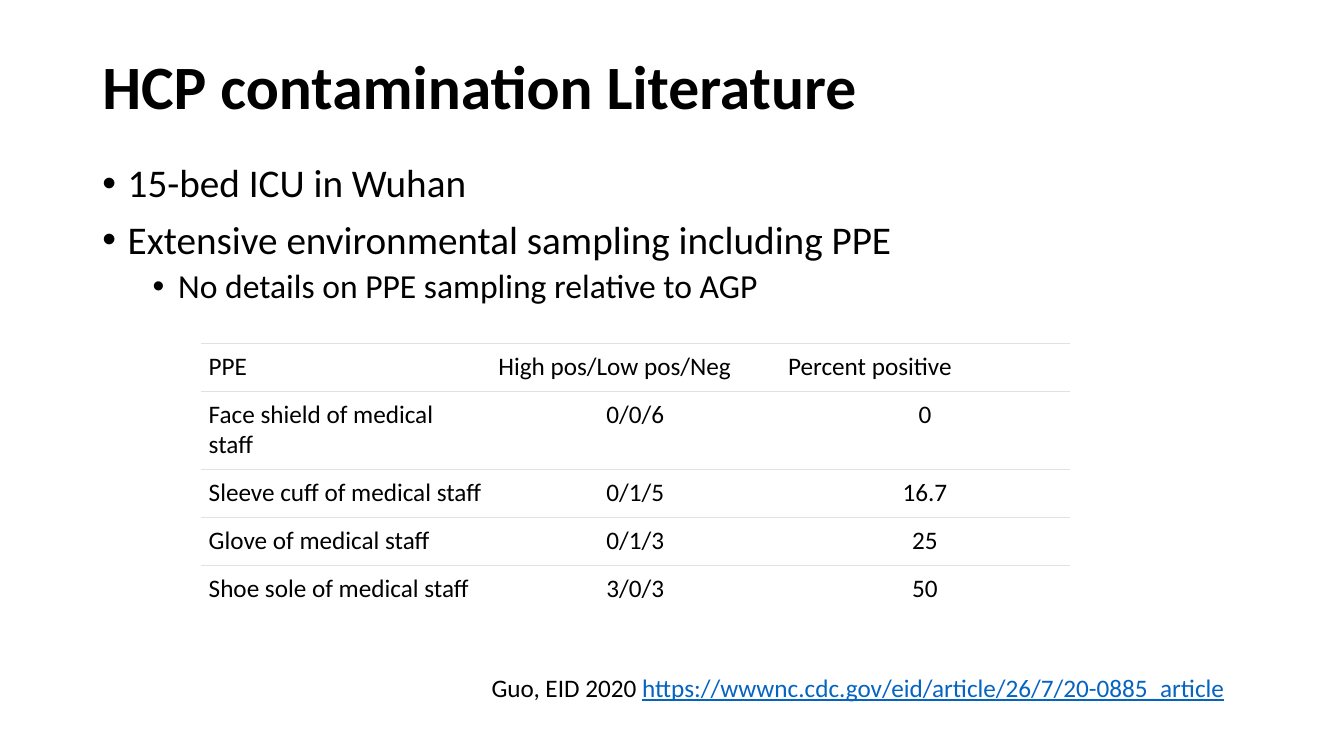
from lxml import etree
from pptx import Presentation
from pptx.dml.color import RGBColor
from pptx.enum.text import MSO_ANCHOR, PP_ALIGN
from pptx.oxml.ns import qn
from pptx.util import Cm, Pt

# Content
TITLE = "HCP contamination Literature"
BULLETS = [  # level, text
    (0, "15-bed ICU in Wuhan"),
    (0, "Extensive environmental sampling including PPE"),
    (1, "No details on PPE sampling relative to AGP"),
]
PPE_ROWS = [
    ("PPE", "High pos/Low pos/Neg", "Percent positive"),
    ("Face shield of medical staff", "0/0/6", "0"),
    ("Sleeve cuff of medical staff", "0/1/5", "16.7"),
    ("Glove of medical staff", "0/1/3", "25"),
    ("Shoe sole of medical staff", "3/0/3", "50"),
]
CITATION = "Guo, EID 2020 "
ADDRESS = "https://wwwnc.cdc.gov/eid/article/26/7/20-0885_article"

# Style
FONT = "Calibri"
BLACK = RGBColor(0x00, 0x00, 0x00)
WHITE = RGBColor(0xFF, 0xFF, 0xFF)
LINK_BLUE = RGBColor(0x05, 0x63, 0xC1)
RULE_GREY = RGBColor(0xDE, 0xE2, 0xE6)
CENTER, LEFT, MIDDLE = PP_ALIGN.CENTER, PP_ALIGN.LEFT, MSO_ANCHOR.MIDDLE
LEVELS = [(28, 10, Cm(0.64)), (24, 5, Cm(1.91))]  # size, space before, indent
HANGING = Cm(0.64)

# Layout
MARGIN, CONTENT_WIDTH = Cm(2.33), Cm(29.21)
COLUMN_WIDTH, LINE_HEIGHT, TALL_ROW = Cm(7.3), Cm(1.2), Cm(1.98)
CELL_INSET = Cm(0.2)


def add_span(para, text, size, color=BLACK, bold=False, underline=False):
    span = para.add_run()
    span.text = text
    span.font.name = FONT
    span.font.size = Pt(size)
    span.font.color.rgb = color
    span.font.bold = bold
    span.font.underline = underline


def add_box(page, left, top, width, height):
    frame = page.shapes.add_textbox(left, top, width, height).text_frame
    frame.word_wrap = True
    return frame


def set_bullet(para, indent):
    props = para._p.get_or_add_pPr()
    props.set("marL", str(indent))
    props.set("indent", str(-HANGING))
    etree.SubElement(props, qn("a:buFont")).set("typeface", "Arial")
    etree.SubElement(props, qn("a:buChar")).set("char", "•")


def set_borders(cell, ruled_sides):
    props = cell._tc.get_or_add_tcPr()
    for place, side in enumerate(("lnL", "lnR", "lnT", "lnB")):
        line = etree.Element(qn("a:" + side), w=str(Pt(0.75)))
        if side in ruled_sides:
            fill = etree.SubElement(line, qn("a:solidFill"))
            etree.SubElement(fill, qn("a:srgbClr")).set("val", str(RULE_GREY))
        else:
            etree.SubElement(line, qn("a:noFill"))
        props.insert(place, line)


def add_ppe_table(page):
    rows, columns = len(PPE_ROWS), len(PPE_ROWS[0])
    heights = [LINE_HEIGHT, TALL_ROW] + [LINE_HEIGHT] * (rows - 2)
    table = page.shapes.add_table(rows, columns, Cm(5.06), Cm(8.66),
                                  COLUMN_WIDTH * columns, sum(heights)).table
    table.first_row = table.horz_banding = False
    for column in table.columns:
        column.width = COLUMN_WIDTH
    for r, texts in enumerate(PPE_ROWS):
        table.rows[r].height = heights[r]
        sides = ("lnT", "lnB") if r < rows - 1 else ("lnT",)
        for c, text in enumerate(texts):
            cell = table.cell(r, c)
            cell.margin_left = cell.margin_right = CELL_INSET
            cell.margin_top = cell.margin_bottom = CELL_INSET
            cell.fill.solid()
            cell.fill.fore_color.rgb = WHITE
            set_borders(cell, sides)
            para = cell.text_frame.paragraphs[0]
            para.alignment = CENTER if r and c else LEFT
            add_span(para, text, 18)


def main():
    deck = Presentation()
    deck.slide_width, deck.slide_height = Cm(33.87), Cm(19.05)
    page = deck.slides.add_slide(deck.slide_layouts[6])

    # Title
    frame = add_box(page, MARGIN, Cm(0.84), CONTENT_WIDTH, Cm(2.82))
    frame.vertical_anchor = MIDDLE
    para = frame.paragraphs[0]
    para.line_spacing = 0.9
    add_span(para, TITLE, 44, bold=True)

    # Bullets
    frame = add_box(page, MARGIN, Cm(4.01), CONTENT_WIDTH, Cm(12.09))
    for i, (level, text) in enumerate(BULLETS):
        size, before, indent = LEVELS[level]
        para = frame.add_paragraph() if i else frame.paragraphs[0]
        para.level = level
        para.line_spacing = 0.9
        para.space_before = Pt(before)
        set_bullet(para, indent)
        add_span(para, text, size)

    add_ppe_table(page)

    # Citation
    para = add_box(page, Cm(12.14), Cm(16.81), Cm(19.38), Cm(1.8)).paragraphs[0]
    add_span(para, CITATION, 18)
    add_span(para, ADDRESS, 18, LINK_BLUE, underline=True)

    deck.save("out.pptx")


if __name__ == "__main__":
    main()
